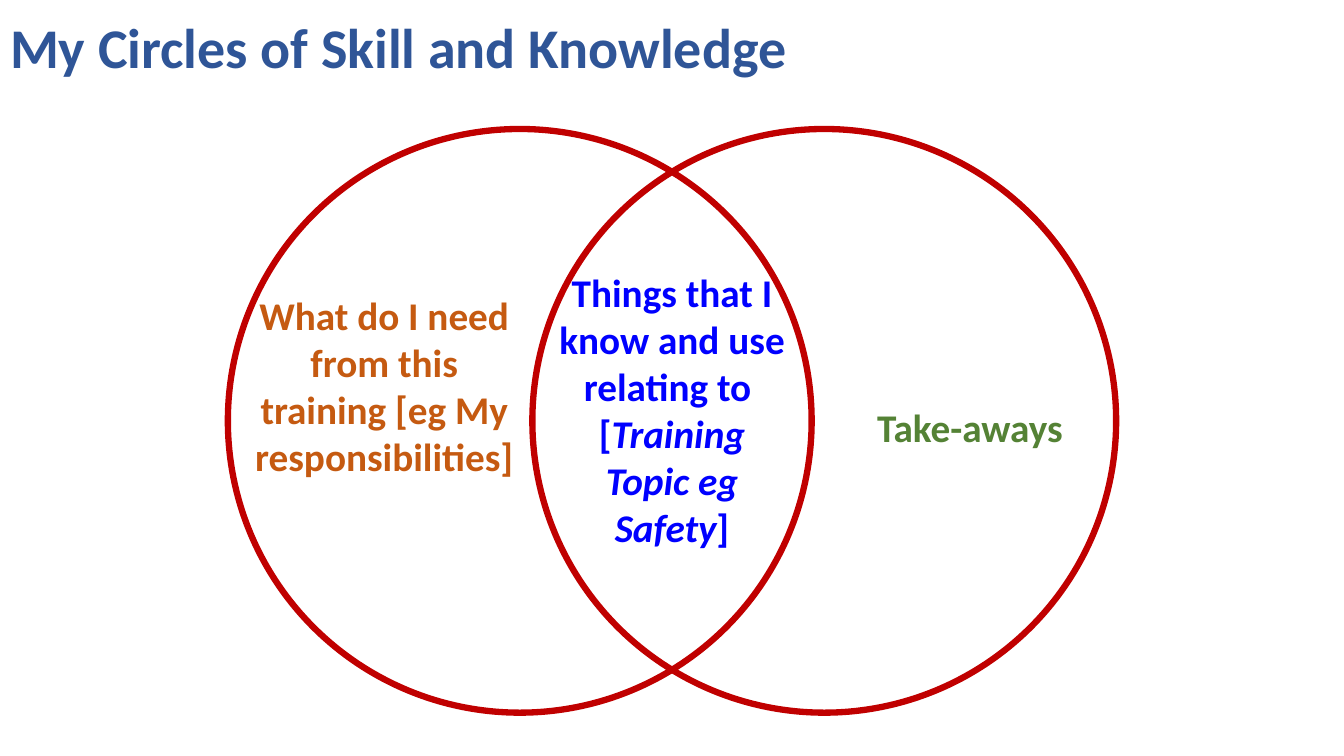
from pptx import Presentation
from pptx.dml.color import RGBColor
from pptx.enum.shapes import MSO_SHAPE as Shape
from pptx.enum.text import MSO_ANCHOR as Anchor, PP_ALIGN as Align
from pptx.util import Emu, Pt

# Content
TITLE = "My Circles of Skill and Knowledge"
COLORS = {"title": "2F5597", "ring": "C00000", "need": "C55A11",
          "know": "0000FF", "take": "548235"}
# Each label: colour name, (left, top, width, height), lines of (text, italic)
LABELS = [
    ("take", (855, 395, 214, 57), [[("Take-aways", False)]]),
    ("know", (543, 261, 247, 293), [
        [("Things that I know and use relating to ", False)],
        [("[", False), ("Training Topic eg Safety", True), ("]", False)],
    ]),
    ("need", (242, 284, 278, 199), [
        [("What do I need from this training [eg My responsibilities]", False)],
    ]),
]

# Layout: 100 px to the inch
PX = 9144
PAGE_SIZE = (1333, 750)
TITLE_BOX = (0, 0, 1166, 99)
RING_LEFT, RING_TOP, RING_SIZE, RING_STEP = 226, 128, 579, 302


def px(*lengths):
    return [Emu(length * PX) for length in lengths]


def style(span, color, size, italic=False):
    font = span.font
    font.name, font.size = "Calibri", Pt(size)
    font.bold, font.italic = True, italic
    font.color.rgb = RGBColor.from_string(COLORS[color])


deck = Presentation()
deck.slide_width, deck.slide_height = px(*PAGE_SIZE)
page = deck.slides.add_slide(deck.slide_layouts[5])

# Title
title = page.shapes.title
title.left, title.top, title.width, title.height = px(*TITLE_BOX)
title.text_frame.text = TITLE
title.text_frame.vertical_anchor = Anchor.MIDDLE
para = title.text_frame.paragraphs[0]
para.alignment, para.line_spacing, para.space_after = Align.LEFT, 0.9, Pt(6)
style(para.runs[0], "title", 40)

# Overlapping circles
for index in range(2):
    left = RING_LEFT + index * RING_STEP
    ring = page.shapes.add_shape(
        Shape.OVAL, *px(left, RING_TOP, RING_SIZE, RING_SIZE))
    ring.shadow.inherit = False
    ring.fill.background()
    ring.line.color.rgb = RGBColor.from_string(COLORS["ring"])
    ring.line.width = Pt(4.5)

# Labels inside the circles
for color, bounds, lines in LABELS:
    box = page.shapes.add_textbox(*px(*bounds))
    box.text_frame.word_wrap = True
    para = box.text_frame.paragraphs[0]
    para.alignment = Align.CENTER
    for number, line in enumerate(lines):
        if number:
            para.add_line_break()
        for text, italic in line:
            span = para.add_run()
            span.text = text
            style(span, color, 28, italic)

deck.save("out.pptx")
